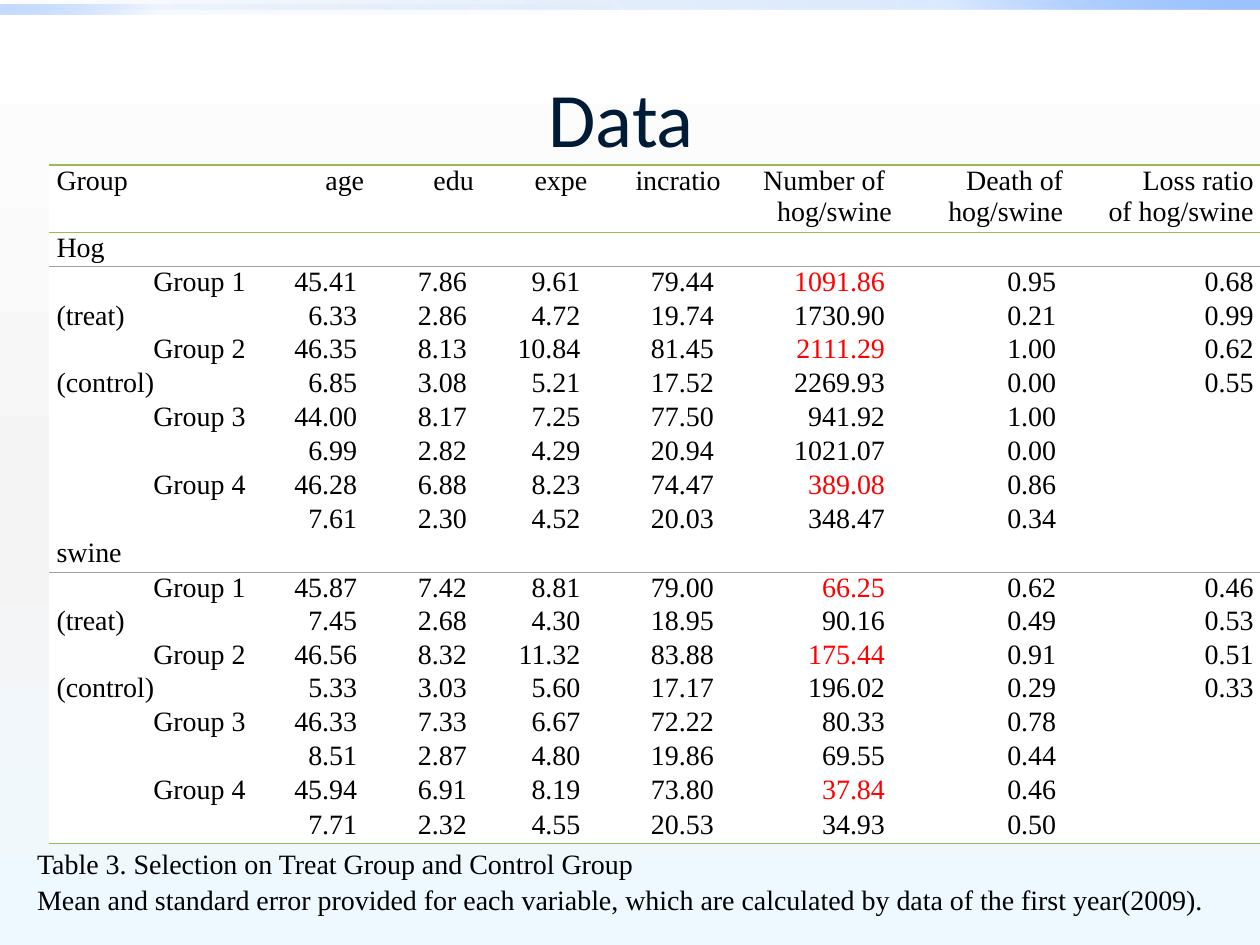
from lxml import etree
from pptx import Presentation
from pptx.dml.color import RGBColor
from pptx.enum.shapes import MSO_SHAPE
from pptx.enum.text import MSO_ANCHOR, PP_ALIGN
from pptx.oxml.ns import qn
from pptx.util import Cm, Pt

RECT = MSO_SHAPE.RECTANGLE
MIDDLE = MSO_ANCHOR.MIDDLE
LEFT, CENTER = PP_ALIGN.LEFT, PP_ALIGN.CENTER
RIGHT, JUSTIFY = PP_ALIGN.RIGHT, PP_ALIGN.JUSTIFY

COLORS = {
    "white": "FFFFFF", "black": "000000", "red": "FF0000", "navy": "001B36",
    "green": "9BBB59", "gray": "A0A0A0", "smoke": "F4F4F4", "ice": "EEF9FF",
    "deep": "0058B7", "blue": "4F95FF", "sky": "9EC2FF",
}
SERIF = "Times New Roman"
WIDTHS = [4.11, 2.39, 2.21, 2.29, 2.69, 3.45, 3.45, 3.84]
HEAD_H, FULL_H, OPEN_H = 1.25, 0.62, 0.69
COUNT = 5  # column with the number of animals
LAST = 7

HEAD = ["Group", "age", "edu", "expe", "incratio", "Number of \nhog/swine",
        "Death of\nhog/swine", "Loss ratio\nof hog/swine"]
BODY = [
    ("Hog", ""),
    ("Group 1", "45.41 7.86 9.61 79.44 1091.86 0.95 0.68"),
    ("(treat)", "6.33 2.86 4.72 19.74 1730.90 0.21 0.99"),
    ("Group 2", "46.35 8.13 10.84 81.45 2111.29 1.00 0.62"),
    ("(control)", "6.85 3.08 5.21 17.52 2269.93 0.00 0.55"),
    ("Group 3", "44.00 8.17 7.25 77.50 941.92 1.00"),
    ("", "6.99 2.82 4.29 20.94 1021.07 0.00"),
    ("Group 4", "46.28 6.88 8.23 74.47 389.08 0.86"),
    ("", "7.61 2.30 4.52 20.03 348.47 0.34"),
    ("swine", ""),
    ("Group 1", "45.87 7.42 8.81 79.00 66.25 0.62 0.46"),
    ("(treat)", "7.45 2.68 4.30 18.95 90.16 0.49 0.53"),
    ("Group 2", "46.56 8.32 11.32 83.88 175.44 0.91 0.51"),
    ("(control)", "5.33 3.03 5.60 17.17 196.02 0.29 0.33"),
    ("Group 3", "46.33 7.33 6.67 72.22 80.33 0.78"),
    ("", "8.51 2.87 4.80 19.86 69.55 0.44"),
    ("Group 4", "45.94 6.91 8.19 73.80 37.84 0.46"),
    ("", "7.71 2.32 4.55 20.53 34.93 0.50"),
]
CAPTION = ("Table 3. Selection on Treat Group and Control Group\n"
           "Mean and standard error provided for each variable, "
           "which are calculated by data of the first year(2009).")


def rgb(name):
    return RGBColor.from_string(COLORS[name])


def shade(fill, node, stops, angle):
    """Give a fill gradient stops of (percent, color, opacity percent)."""
    fill.gradient()
    grad = next(node.iter(qn("a:gradFill")))
    for child in list(grad):
        grad.remove(child)
    group = etree.SubElement(grad, qn("a:gsLst"))
    for place, name, alpha in stops:
        stop = etree.SubElement(group, qn("a:gs"), pos=str(place * 1000))
        color = etree.SubElement(stop, qn("a:srgbClr"), val=COLORS[name])
        etree.SubElement(color, qn("a:alpha"), val=str(alpha * 1000))
    etree.SubElement(grad, qn("a:lin"), ang=str(angle * 60000), scaled="0")


def add_strip(slide, top, width, alphas, angle):
    strip = slide.shapes.add_shape(RECT, 0, Cm(top), Cm(width), Cm(0.2))
    strip.shadow.inherit = False
    strip.line.fill.background()
    stops = zip((0, 75, 100), ("deep", "blue", "sky"), alphas)
    shade(strip.fill, strip.element, stops, angle)


def write(frame, text, align, color="black", size=16, face=SERIF):
    frame.text = text
    for par in frame.paragraphs:
        par.alignment = align
        for run in par.runs:
            run.font.color.rgb = rgb(color)
            for key, value in {"size": Pt(size), "name": face}.items():
                setattr(run.font, key, value)
        if not text:
            etree.SubElement(par._p, qn("a:endParaRPr"), sz=str(size * 100))


def add_text(slide, box, text, align, **look):
    frame = slide.shapes.add_textbox(*map(Cm, box)).text_frame
    frame.word_wrap = True
    frame.vertical_anchor = MIDDLE
    write(frame, text, align, **look)
    return frame


def rule(cell, edges):
    """Draw the given edges as (color, points) and clear the others."""
    props = cell._tc.get_or_add_tcPr()
    for side in "LRTB":
        line = etree.SubElement(props, qn(f"a:ln{side}"))
        if side in edges:
            name, width = edges[side]
            line.set("w", str(Pt(width)))
            fill = etree.SubElement(line, qn("a:solidFill"))
            etree.SubElement(fill, qn("a:srgbClr"), val=COLORS[name])
        else:
            etree.SubElement(line, qn("a:noFill"))


def fill_cell(cell, text, align, color, edges):
    margins = {"margin_left": 0.15, "margin_right": 0.15,
               "margin_top": 0, "margin_bottom": 0}
    for key, value in margins.items():
        setattr(cell, key, Cm(value))
    rule(cell, edges)
    cell.fill.solid()
    cell.fill.fore_color.rgb = rgb("white")
    write(cell.text_frame, text, align, color)


def body_row(label, values):
    """Pad a row to all columns; every figure but the last ends in a space."""
    cells = [value + " " for value in values.split()]
    if len(cells) == LAST:
        cells[-1] = cells[-1].strip()
    return [label] + cells + [""] * (LAST - len(cells))


def add_data(slide):
    rows = [HEAD] + [body_row(*row) for row in BODY]
    heights = [HEAD_H] + [FULL_H if row[LAST] else OPEN_H for row in rows[1:]]
    table = slide.shapes.add_table(
        len(rows), len(WIDTHS), Cm(0.99), Cm(3.33),
        Cm(sum(WIDTHS)), Cm(sum(heights))).table
    table.first_row = table.horz_banding = False
    for col, width in zip(table.columns, WIDTHS):
        col.width = Cm(width)

    below = {0: ("green", 1), len(rows) - 1: ("green", 1)}
    for r, row in enumerate(rows):
        if r and not any(row[1:]):
            below[r] = ("gray", 0.5)
    above = {r + 1: line for r, line in below.items()} | {0: ("green", 1)}

    for r, row in enumerate(rows):
        table.rows[r].height = Cm(heights[r])
        edges = {side: lines[r] for side, lines in (("T", above), ("B", below))
                 if r in lines}
        marked = row[0] in ("Group 1", "Group 2", "Group 4")
        for c, text in enumerate(row):
            plain = c == 0 and not text.startswith("Group ")
            color = "red" if marked and c == COUNT else "black"
            fill_cell(table.cell(r, c), text, JUSTIFY if plain else RIGHT,
                      color, edges)


def main():
    deck = Presentation()
    deck.slide_width, deck.slide_height = Cm(25.4), Cm(19.05)
    slide = deck.slides.add_slide(deck.slide_layouts[6])
    shade(slide.background.fill, slide.element,
          [(0, "white", 100), (55, "smoke", 100), (100, "ice", 100)], 90)
    add_strip(slide, 0, 25.4, (0, 20, 100), 315)
    add_strip(slide, 0.1, 12.7, (0, 5, 60), 135)
    add_text(slide, (1.27, 0.76, 22.86, 3.18), "Data ", CENTER,
             color="navy", size=44, face="Calibri")
    add_data(slide)
    note = add_text(slide, (0.5, 16.94, 24.4, 1.62), CAPTION, LEFT)
    for par in note.paragraphs:
        par.line_spacing = 1.05
    deck.save("out.pptx")


if __name__ == "__main__":
    main()
